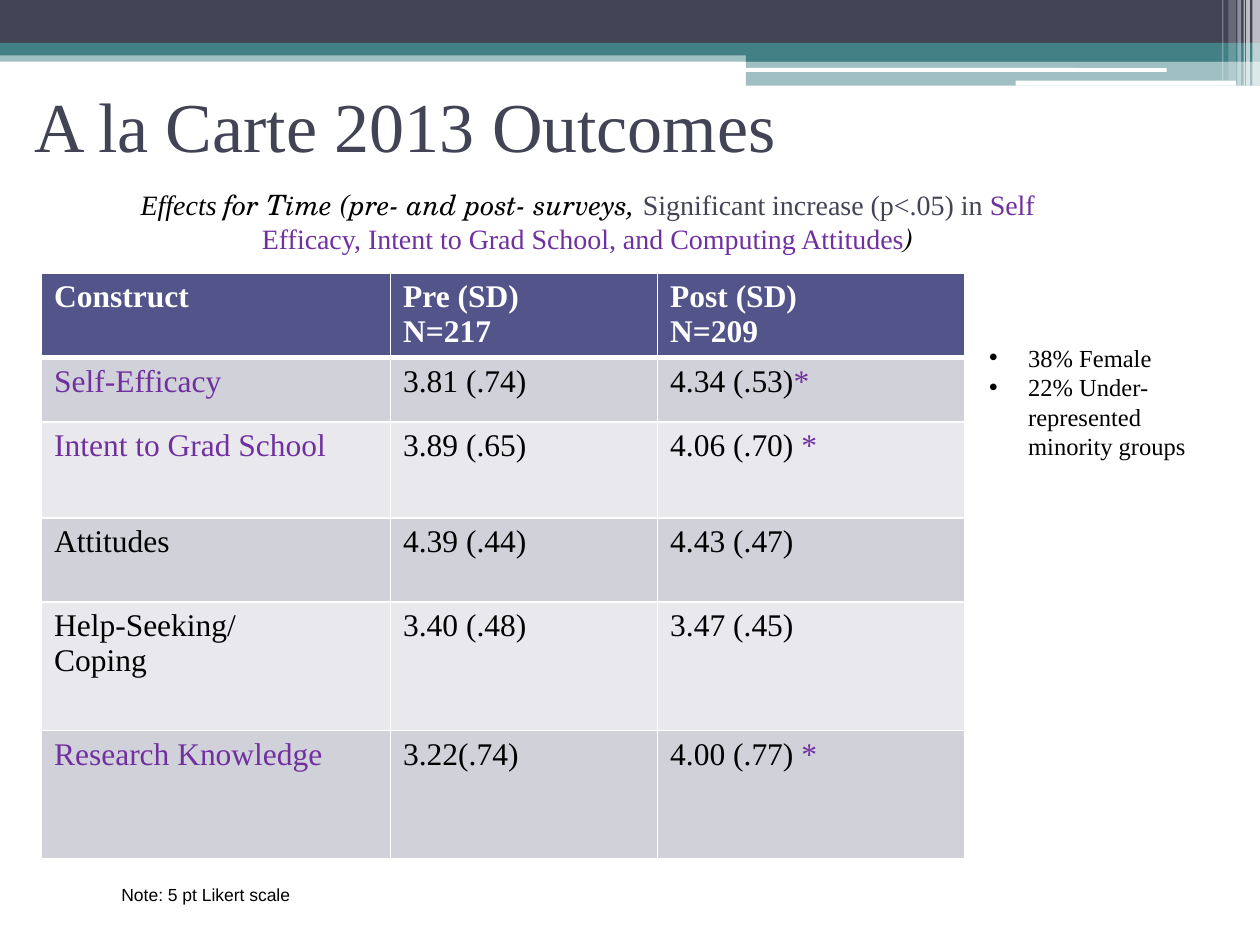
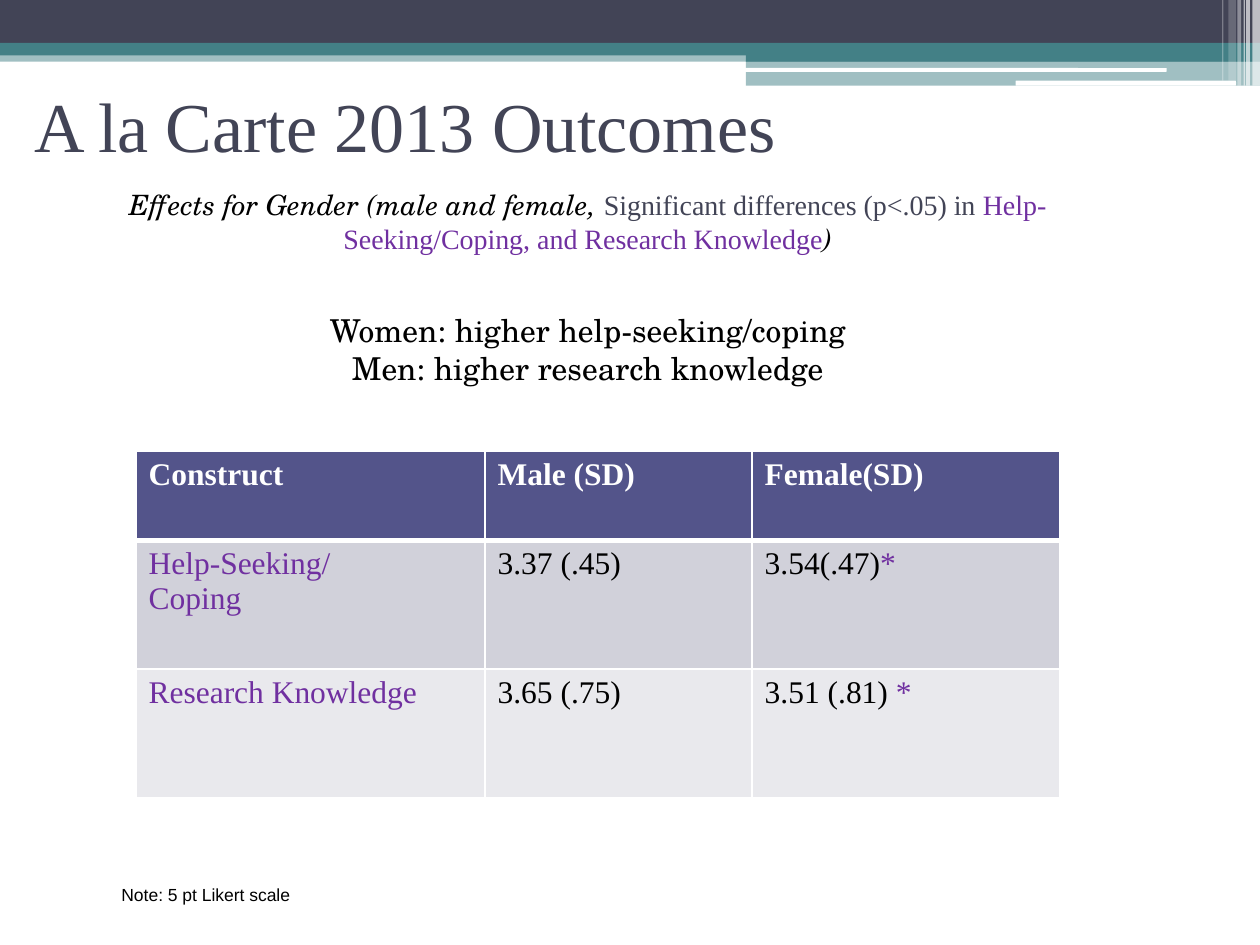
from dataclasses import dataclass
from typing import NamedTuple

from lxml import etree
from pptx import Presentation
from pptx.dml.color import RGBColor
from pptx.enum.shapes import MSO_SHAPE
from pptx.enum.text import MSO_ANCHOR, MSO_AUTO_SIZE, PP_ALIGN
from pptx.oxml.ns import qn
from pptx.util import Inches, Pt

RECTANGLE = MSO_SHAPE.RECTANGLE
ROUNDED = MSO_SHAPE.ROUNDED_RECTANGLE
LEFT, CENTER, RIGHT = PP_ALIGN.LEFT, PP_ALIGN.CENTER, PP_ALIGN.RIGHT
TOP, MIDDLE = MSO_ANCHOR.TOP, MSO_ANCHOR.MIDDLE

TITLE_AND_CONTENT, TITLE_ONLY = 1, 5

COLORS = {
    "white": "FFFFFF",
    "black": "000000",
    "slate": "424456",
    "teal": "438086",
    "purple": "7030A0",
    "header": "53548A",
    "odd row": "D1D1DA",
    "even row": "E9E9ED",
}
SERIF, SCHOLA, SANS = "Times New Roman", "TeX Gyre Schola", "Arial"

TITLE = "A la Carte 2013 Outcomes"
NOTE = "Note: 5 pt Likert scale"
COLUMN_WIDTHS = (2.77, 2.12, 2.44)


class Box(NamedTuple):
    left: float
    top: float
    width: float
    height: float

    def lengths(self) -> list:
        return [Inches(value) for value in self]


class Band(NamedTuple):
    box: Box
    color: str
    opacity: int = 100
    preset: int = RECTANGLE


class Phrase(NamedTuple):
    text: str
    font: str
    color: str
    italic: bool = False


@dataclass
class ResultTable:
    left: float
    top: float
    row_heights: tuple
    rows: tuple


BANDS = (
    Band(Box(0, 0.4, 10, 0.09), "teal", 50),
    Band(Box(0, 0, 10, 0.34), "slate"),
    Band(Box(0, 0.34, 10, 0.1), "teal"),
    Band(Box(5.92, 0.39, 4.08, 0.1), "teal"),
    Band(Box(5.92, 0.48, 4.08, 0.2), "teal", 50),
    Band(Box(5.91, 0.54, 3.35, 0.03), "white", preset=ROUNDED),
    Band(Box(8.06, 0.64, 1.75, 0.04), "white", preset=ROUNDED),
    Band(Box(9.94, 0, 0.06, 0.68), "white", 65),
    Band(Box(9.89, 0, 0.03, 0.68), "white", 65),
    Band(Box(9.87, 0, 0.01, 0.68), "white", 60),
    Band(Box(9.82, 0, 0.03, 0.68), "white", 40),
    Band(Box(9.75, 0, 0.06, 0.64), "white", 20),
    Band(Box(9.7, 0, 0.01, 0.64), "white", 30),
)

TIME_EFFECTS = (
    Phrase("Effects ", SERIF, "black", True),
    Phrase("for Time (pre- and post- surveys, ", SCHOLA, "black", True),
    Phrase("Significant increase (p<.05) in ", SERIF, "slate"),
    Phrase("Self Efficacy, Intent to Grad School, and Computing Attitudes", SERIF, "purple"),
    Phrase(")", SCHOLA, "black", True),
)
GENDER_EFFECTS = (
    Phrase("Effects for Gender (male and female, ", SCHOLA, "black", True),
    Phrase("Significant differences (p<.05) in ", SERIF, "slate"),
    Phrase("Help-Seeking/Coping, and Research Knowledge", SERIF, "purple"),
    Phrase(")", SCHOLA, "black", True),
)

TIME_TABLE = ResultTable(0.33, 2.17, (0.67, 0.51, 0.76, 0.67, 1.02, 1.02), (
    ("Construct", "Pre (SD)\nN=217", "Post (SD)\nN=209"),
    ("Self-Efficacy", "3.81 (.74)", "4.34 (.53)*"),
    ("Intent to Grad School", "3.89 (.65)", "4.06 (.70) *"),
    ("Attitudes", "4.39 (.44)", "4.43 (.47)"),
    ("Help-Seeking/\nCoping", "3.40 (.48)", "3.47 (.45)"),
    ("Research Knowledge", "3.22(.74)", "4.00 (.77) *"),
))
GENDER_TABLE = ResultTable(1.08, 3.58, (0.71, 1.02, 1.02), (
    ("Construct", "Male (SD)", "Female(SD)"),
    ("Help-Seeking/\nCoping", "3.37 (.45)", "3.54(.47)*"),
    ("Research Knowledge", "3.65 (.75)", "3.51 (.81) *"),
))


def rgb(color: str) -> RGBColor:
    return RGBColor.from_string(COLORS[color])


def style_font(font, name: str, size: float, color: str, bold: bool = False) -> None:
    font.name, font.size, font.bold = name, Pt(size), bold
    font.color.rgb = rgb(color)


def place(shape, box: Box) -> None:
    shape.left, shape.top, shape.width, shape.height = box.lengths()


def add_filled_shape(slide, band: Band):
    shape = slide.shapes.add_shape(band.preset, *band.box.lengths())
    shape.shadow.inherit = False
    shape.fill.solid()
    shape.fill.fore_color.rgb = rgb(band.color)
    shape.line.fill.background()
    if band.opacity < 100:
        color = shape.fill._xPr.find(".//" + qn("a:srgbClr"))
        etree.SubElement(color, qn("a:alpha"), val=str(band.opacity * 1000))
    return shape


def add_text(slide, box: Box, lines: tuple, font: str, size: float, alignment) -> None:
    frame = slide.shapes.add_textbox(*box.lengths()).text_frame
    frame.word_wrap = True
    frame.text = "\n".join(lines)
    for paragraph in frame.paragraphs:
        paragraph.alignment = alignment
        style_font(paragraph.font, font, size, "black")


def add_effects(slide, phrases: tuple) -> None:
    shape = add_filled_shape(slide, Band(Box(0.75, 1.42, 7.83, 0.67), "white", preset=ROUNDED))
    shape.line.color.rgb = rgb("white")
    shape.line.width = Pt(1.5)
    frame = shape.text_frame
    frame.word_wrap = True
    frame.vertical_anchor = MIDDLE
    paragraph = frame.paragraphs[0]
    paragraph.alignment = CENTER
    for phrase in phrases:
        run = paragraph.add_run()
        run.text = phrase.text
        style_font(run.font, phrase.font, 16, phrase.color)
        run.font.italic = phrase.italic


def add_cell_borders(cell, top: float, bottom: float) -> None:
    properties = cell._tc.get_or_add_tcPr()
    for side, width in (("L", 1), ("R", 1), ("T", top), ("B", bottom)):
        line = etree.SubElement(properties, qn(f"a:ln{side}"), w=str(Pt(width)))
        fill = etree.SubElement(line, qn("a:solidFill"))
        etree.SubElement(fill, qn("a:srgbClr"), val=COLORS["white"])


def fill_cell(cell, text: str, color: str, bold: bool) -> None:
    """Write the cell text, with a significance star in purple."""
    value, star, _ = text.partition("*")
    cell.text = value
    for paragraph in cell.text_frame.paragraphs:
        style_font(paragraph.font, SERIF, 18, color, bold)
        for run in paragraph.runs:
            run.font.color.rgb = rgb(color)
    if star:
        run = cell.text_frame.paragraphs[-1].add_run()
        run.text = star
        run.font.color.rgb = rgb("purple")


def add_results(slide, results: ResultTable) -> None:
    box = Box(results.left, results.top, sum(COLUMN_WIDTHS), sum(results.row_heights))
    table = slide.shapes.add_table(
        len(results.rows), len(COLUMN_WIDTHS), *box.lengths()).table
    for column, width in zip(table.columns, COLUMN_WIDTHS):
        column.width = Inches(width)
    for index, (texts, height) in enumerate(zip(results.rows, results.row_heights)):
        table.rows[index].height = Inches(height)
        is_header = index == 0
        significant = texts[-1].endswith("*")
        background = "header" if is_header else "odd row" if index % 2 else "even row"
        for column_index, text in enumerate(texts):
            cell = table.cell(index, column_index)
            add_cell_borders(cell, 3 if index == 1 else 1, 3 if is_header else 1)
            cell.fill.solid()
            cell.fill.fore_color.rgb = rgb(background)
            if is_header:
                color = "white"
            else:
                color = "purple" if significant and column_index == 0 else "black"
            fill_cell(cell, text, color, is_header)


def fill_bullets(placeholder, box: Box, items: tuple) -> None:
    place(placeholder, box)
    frame = placeholder.text_frame
    frame.auto_size = MSO_AUTO_SIZE.NONE
    frame.vertical_anchor = TOP
    frame.text = "\n".join(items)
    indent = Inches(0.31)
    for paragraph in frame.paragraphs:
        properties = paragraph._p.get_or_add_pPr()
        properties.set("marL", str(indent))
        properties.set("indent", str(-indent))
        etree.SubElement(properties, qn("a:buFont"), typeface=SANS)
        etree.SubElement(properties, qn("a:buChar"), char="•")
        paragraph.space_before = Pt(0)
        style_font(paragraph.font, SERIF, 14, "black")


def add_outcome_slide(presentation, layout: int, effects: tuple, results: ResultTable):
    slide = presentation.slides.add_slide(presentation.slide_layouts[layout])
    for band in BANDS:
        add_filled_shape(slide, band)
    title = slide.shapes.title
    place(title, Box(0.17, 0.36, 9, 1.25))
    title.text = TITLE
    title.text_frame.auto_size = MSO_AUTO_SIZE.NONE
    title.text_frame.vertical_anchor = MIDDLE
    paragraph = title.text_frame.paragraphs[0]
    paragraph.alignment = LEFT
    style_font(paragraph.font, SERIF, 40, "slate")
    add_results(slide, results)
    add_text(slide, Box(0.73, 6.97, 1.67, 0.27), (NOTE,), SANS, 10, RIGHT)
    add_effects(slide, effects)
    return slide


def main() -> None:
    presentation = Presentation()
    presentation.slide_width, presentation.slide_height = Inches(10), Inches(7.5)

    time_slide = add_outcome_slide(presentation, TITLE_AND_CONTENT, TIME_EFFECTS, TIME_TABLE)
    fill_bullets(time_slide.placeholders[1], Box(7.75, 2.67, 2.08, 1.04),
                 ("38% Female", "22% Under-represented minority groups"))

    gender_slide = add_outcome_slide(presentation, TITLE_ONLY, GENDER_EFFECTS, GENDER_TABLE)
    add_text(gender_slide, Box(1.5, 2.42, 6.33, 0.71),
             ("Women: higher help-seeking/coping", "Men: higher research knowledge"),
             SCHOLA, 18, CENTER)

    presentation.save("out.pptx")


if __name__ == "__main__":
    main()
